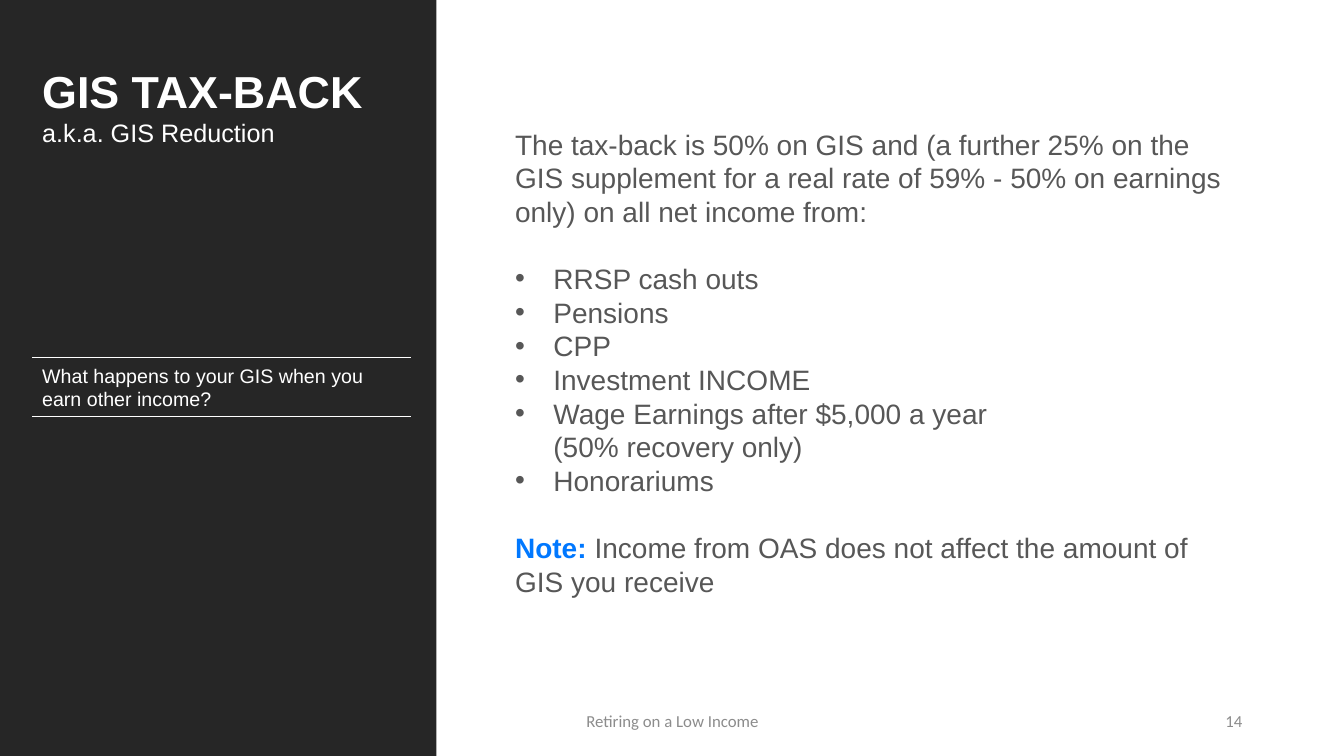
from dataclasses import dataclass

from lxml.etree import SubElement
from pptx import Presentation
from pptx.dml.color import RGBColor
from pptx.enum.shapes import MSO_CONNECTOR, MSO_SHAPE
from pptx.enum.text import MSO_ANCHOR, PP_ALIGN
from pptx.oxml.ns import qn
from pptx.util import Emu, Pt

PX = 9144


@dataclass(frozen=True)
class Theme:
    """Colours, fonts and type sizes of the deck."""
    dark: str = "262626"
    white: str = "FFFFFF"
    body: str = "575757"
    blue: str = "0078FF"
    grey: str = "8C8C8C"
    main: str = "Arial"
    foot: str = "Calibri"
    title: int = 32
    text: int = 20
    sub: int = 18
    ask: int = 14
    small: int = 12
    gap: int = 24


class Page:
    """Draws styled elements on one slide."""

    def __init__(self, slide, theme):
        self.slide = slide
        self.theme = theme

    def panel(self, *box):
        shape = self.slide.shapes.add_shape(
            MSO_SHAPE.RECTANGLE, *[Emu(n * PX) for n in box])
        shape.shadow.inherit = False
        shape.fill.solid()
        shape.fill.fore_color.rgb = RGBColor.from_string(self.theme.dark)
        shape.line.fill.background()

    def rule(self, left, right, top):
        ends = [Emu(n * PX) for n in (left, top, right, top)]
        line = self.slide.shapes.add_connector(MSO_CONNECTOR.STRAIGHT, *ends)
        line.line.color.rgb = RGBColor.from_string(self.theme.white)
        line.line.width = Pt(0.5)
        SubElement(line._element.spPr, qn("a:effectLst"))

    def frame(self, box, anchor=MSO_ANCHOR.TOP, inset=None):
        shape = self.slide.shapes.add_textbox(*[Emu(n * PX) for n in box])
        frame = shape.text_frame
        style = {"word_wrap": True, "vertical_anchor": anchor}
        if inset is not None:
            for side in ("left", "top", "right", "bottom"):
                style[f"margin_{side}"] = Emu(inset * PX)
        for key, value in style.items():
            setattr(frame, key, value)
        return frame

    def para(self, frame, runs, first=False, bullet=False, **style):
        para = frame.paragraphs[0] if first else frame.add_paragraph()
        if bullet:
            props = para._p.get_or_add_pPr()
            props.set("marL", str(38 * PX))
            props.set("indent", str(-38 * PX))
            SubElement(props, qn("a:buFont"), typeface=self.theme.main)
            SubElement(props, qn("a:buChar"), char="•")
        for key, value in style.items():
            setattr(para, key, value)
        for text, form in runs:
            self.words(para, text, **form)

    def words(self, para, text, size, color, name=None, bold=False):
        for i, part in enumerate(text.split("\n")):
            if i:
                para.add_line_break()
            run = para.add_run()
            run.text = part
            form = {"name": name or self.theme.main, "size": Pt(size), "bold": bold}
            for key, value in form.items():
                setattr(run.font, key, value)
            run.font.color.rgb = RGBColor.from_string(color)


def main():
    theme = Theme()
    deck = Presentation()
    deck.slide_width, deck.slide_height = Emu(1333 * PX), Emu(750 * PX)
    page = Page(deck.slides.add_slide(deck.slide_layouts[6]), theme)
    page.panel(0, 0, 433, 750)

    foot = {"size": theme.small, "color": theme.grey, "name": theme.foot}
    for text, left, width, align in (
            ("Retiring on a Low Income", 442, 450, PP_ALIGN.CENTER),
            ("14", 942, 300, PP_ALIGN.RIGHT)):
        frame = page.frame((left, 695, width, 40), MSO_ANCHOR.MIDDLE)
        page.para(frame, [(text, foot)], first=True, alignment=align)

    head = page.frame((32, 58, 376, 94))
    page.para(head, [("GIS TAX-BACK", {
        "size": theme.title, "color": theme.white, "bold": True})], first=True)
    page.para(head, [("a.k.a. GIS Reduction", {
        "size": theme.sub, "color": theme.white})])

    ask = page.frame((32, 356, 376, 57))
    page.para(ask, [("What happens to your GIS when you earn other income?", {
        "size": theme.ask, "color": theme.white})], first=True)
    for top in (355, 413):
        page.rule(32, 408, top)

    plain = {"size": theme.text, "color": theme.body}
    note = {"size": theme.text, "color": theme.blue, "bold": True}
    gap = Pt(theme.gap)
    body = page.frame((501, 77, 725, 565), MSO_ANCHOR.MIDDLE, 10)
    page.para(body, [(
        "The tax-back is 50% on GIS and (a further 25% on the GIS supplement "
        "for a real rate of 59% - 50% on earnings only) on all net income from:",
        plain)], first=True, space_after=gap)
    for item in ("RRSP cash outs", "Pensions", "CPP", "Investment INCOME",
                 "Wage Earnings after $5,000 a year\n(50% recovery only)",
                 "Honorariums"):
        page.para(body, [(item, plain)], bullet=True)
    page.para(body, [
        ("Note: ", note),
        ("Income from OAS does not affect the amount of GIS you receive", plain),
    ], space_before=gap)

    deck.save("out.pptx")


if __name__ == "__main__":
    main()
